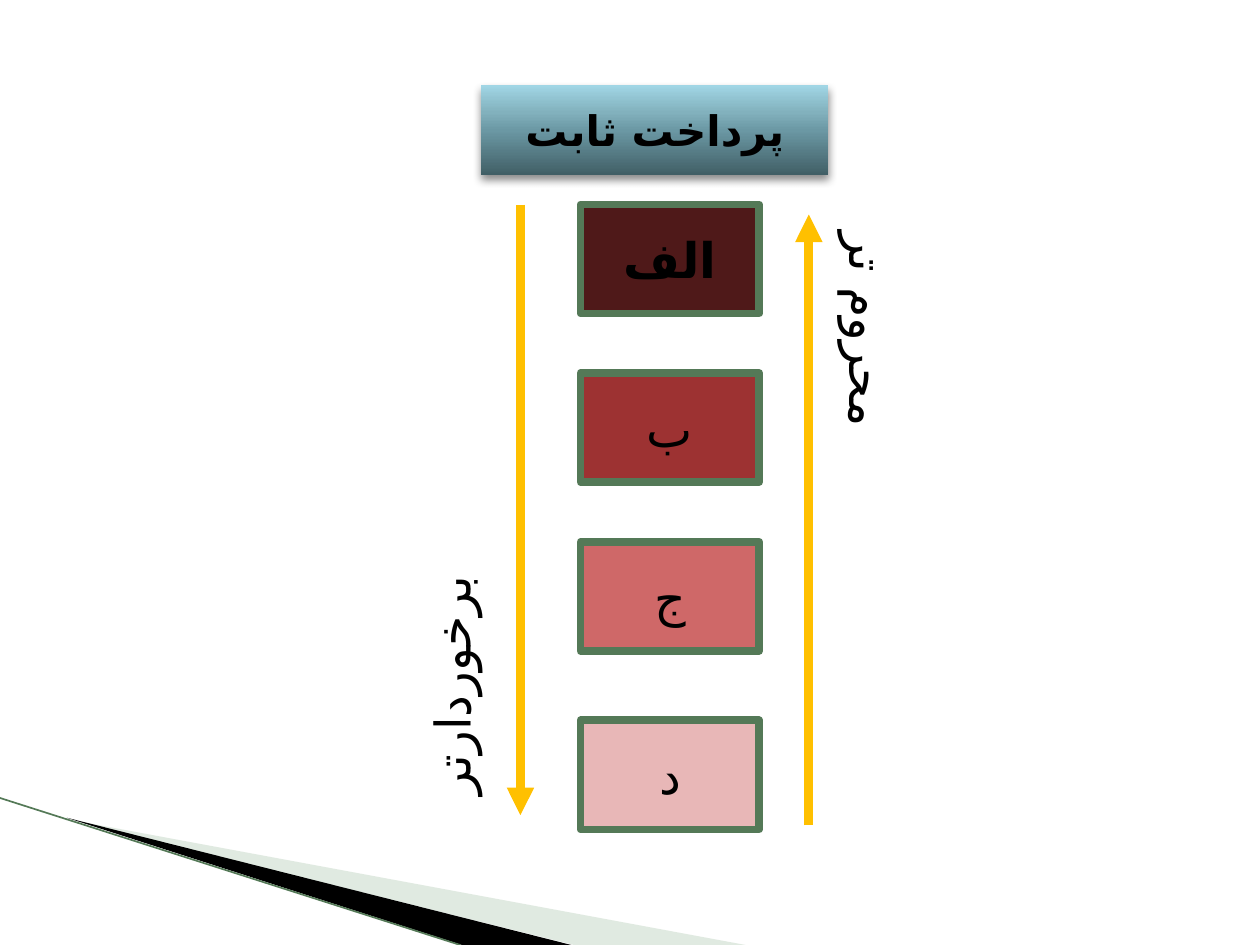
from dataclasses import dataclass

import pptx
import pptx.dml.color
import pptx.enum.shapes
import pptx.enum.text
import pptx.oxml
import pptx.oxml.ns
import pptx.util
from pptx.util import Pt

FONT = "Courier New"
ARABIC_SCRIPT_FONT = "DejaVu Sans"
NAMESPACE = pptx.oxml.ns.nsdecls("a")
RECTANGLE = pptx.enum.shapes.MSO_SHAPE.RECTANGLE
ROUNDED = pptx.enum.shapes.MSO_SHAPE.ROUNDED_RECTANGLE


@dataclass(frozen=True)
class Box:
    text: str
    left: float
    top: float
    width: float
    height: float
    fill: str
    line: str | None
    size: float = 28
    bold: bool = False
    direction: str = "horz"
    preset: int = RECTANGLE


@dataclass(frozen=True)
class Line:
    start: tuple[float, float]
    end: tuple[float, float]
    color: str
    width: float
    arrow: bool = False


@dataclass(frozen=True)
class Wedge:
    points: tuple[tuple[float, float], ...]
    fill: str
    opacity: int = 100


def rgb(color: str):
    return pptx.dml.color.RGBColor.from_string(color)


def parse_element(tag: str, attributes: str = "", content: str = ""):
    return pptx.oxml.parse_xml(f"<a:{tag} {NAMESPACE} {attributes}>{content}</a:{tag}>")


def paint(shape, fill: str, line: str | None = None) -> None:
    shape.shadow.inherit = False
    shape.fill.solid()
    shape.fill.fore_color.rgb = rgb(fill)
    if line:
        shape.line.color.rgb = rgb(line)
        shape.line.width = Pt(4.33)
    else:
        shape.line.fill.background()


def write_text(shape, text: str, *, size: float, bold: bool, direction: str) -> None:
    """Centre right-to-left text in the shape, turned by the given direction."""
    frame = shape.text_frame
    frame.word_wrap = True
    frame.vertical_anchor = pptx.enum.text.MSO_ANCHOR.MIDDLE
    frame._txBody.bodyPr.set("vert", direction)
    paragraph = frame.paragraphs[0]
    paragraph.alignment = pptx.enum.text.PP_ALIGN.CENTER
    paragraph._p.get_or_add_pPr().set("rtl", "1")
    run = paragraph.add_run()
    run.text = text
    run.font.size = Pt(size)
    run.font.bold = bold
    run.font.color.rgb = rgb("000000")
    run.font.name = FONT
    run._r.get_or_add_rPr().append(
        parse_element("cs", f'typeface="{ARABIC_SCRIPT_FONT}"')
    )


def draw_box(slide, box: Box):
    shape = slide.shapes.add_shape(
        box.preset, Pt(box.left), Pt(box.top), Pt(box.width), Pt(box.height)
    )
    paint(shape, box.fill, box.line)
    write_text(shape, box.text, size=box.size, bold=box.bold, direction=box.direction)
    return shape


def draw_line(slide, line: Line) -> None:
    connector = slide.shapes.add_connector(
        pptx.enum.shapes.MSO_CONNECTOR.STRAIGHT,
        *(Pt(value) for value in line.start + line.end),
    )
    connector.line.color.rgb = rgb(line.color)
    connector.line.width = Pt(line.width)
    if line.arrow:
        connector.line._get_or_add_ln().append(parse_element("tailEnd", 'type="triangle"'))
    connector._element.spPr.append(parse_element("effectLst"))


def draw_wedge(slide, wedge: Wedge) -> None:
    first, *others = [(Pt(x), Pt(y)) for x, y in wedge.points]
    builder = slide.shapes.build_freeform(*first)
    builder.add_line_segments(others, close=True)
    shape = builder.convert_to_shape()
    paint(shape, wedge.fill)
    if wedge.opacity < 100:
        color = shape._element.spPr.find(".//" + pptx.oxml.ns.qn("a:srgbClr"))
        color.append(parse_element("alpha", f'val="{wedge.opacity * 1000}"'))


def add_gradient_and_shadow(shape, stops: dict[int, str]) -> None:
    """Fill the shape from bottom to top and let it cast a soft shadow."""
    properties = shape._element.spPr
    stop_list = "".join(
        f'<a:gs pos="{position * 1000}"><a:srgbClr val="{color}"/></a:gs>'
        for position, color in stops.items()
    )
    gradient = parse_element(
        "gradFill", 'rotWithShape="1"',
        f'<a:gsLst>{stop_list}</a:gsLst><a:lin ang="16200000" scaled="0"/>',
    )
    properties.replace(properties.find(pptx.oxml.ns.qn("a:solidFill")), gradient)
    shadow = parse_element(
        "outerShdw",
        f'blurRad="{Pt(5)}" dist="{Pt(3)}" dir="5400000" rotWithShape="0"',
        '<a:srgbClr val="000000"><a:alpha val="45000"/></a:srgbClr>',
    )
    properties.find(pptx.oxml.ns.qn("a:effectLst")).append(shadow)


WEDGES = [
    Wedge(((39.6, 468.4), (426, 540), (328, 540)), "B3CBB5", 40),
    Wedge(((38.2, 467.3), (326.5, 540), (264, 540)), "000000"),
]
EDGE = Line((0, 456), (263, 540), "547957", 0.95)
SIDE_LABELS = [
    Box("برخوردارتر", 223.9, 292.3, 67.7, 198.7, "FFFFFF", "FFFFFF",
        direction="vert270", preset=ROUNDED),
    Box("محروم تر", 462.2, 88.6, 68.4, 198.7, "FFFFFF", "FFFFFF",
        direction="vert", preset=ROUNDED),
]
GROUPS = [
    Box(text, 331.7, top, 102.2, 62.4, fill, "547957", bold=bold)
    for text, top, fill, bold in [
        ("الف", 116.8, "4F1919", True),
        ("ب", 213.1, "9D3232", False),
        ("ج", 309.6, "CF6868", False),
        ("د", 411.6, "E8B7B7", False),
    ]
]
ARROWS = [
    Line((297.4, 117), (297.4, 465.8), "FFC000", 5.25, arrow=True),
    Line((462.2, 471.6), (462.2, 122.6), "FFC000", 5.25, arrow=True),
]
HEADING = Box("پرداخت ثابت", 275, 48.8, 198.4, 51.2, "6B98A4", None, size=24, bold=True)
HEADING_STOPS = {0: "415F66", 50: "6B98A4", 70: "82B1BD", 100: "A1D6E5"}


def main() -> None:
    presentation = pptx.Presentation()
    presentation.slide_width = Pt(720)
    presentation.slide_height = Pt(540)
    slide = presentation.slides.add_slide(presentation.slide_layouts[6])
    for wedge in WEDGES:
        draw_wedge(slide, wedge)
    draw_line(slide, EDGE)
    for box in SIDE_LABELS + GROUPS:
        draw_box(slide, box)
    for arrow in ARROWS:
        draw_line(slide, arrow)
    add_gradient_and_shadow(draw_box(slide, HEADING), HEADING_STOPS)
    presentation.save("out.pptx")


if __name__ == "__main__":
    main()
